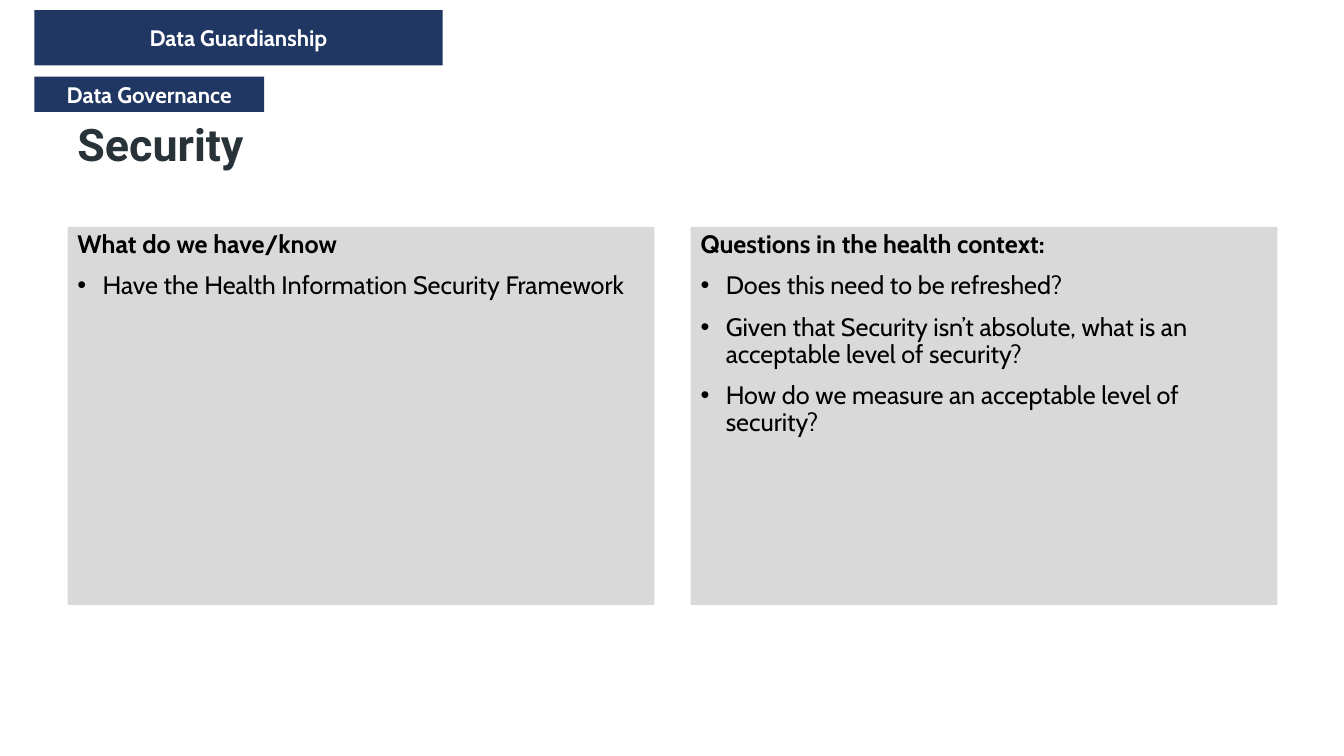
import dataclasses

import pptx
import pptx.dml.color
import pptx.enum.shapes
import pptx.enum.text
import pptx.oxml
import pptx.oxml.ns
import pptx.util

Inches = pptx.util.Inches
Pt = pptx.util.Pt
ANCHOR = pptx.enum.text.MSO_ANCHOR
ALIGN = pptx.enum.text.PP_ALIGN


@dataclasses.dataclass(frozen=True)
class Theme:
    """Colours, typefaces and type sizes of the slide."""
    navy: str = "213763"
    panel: str = "D9D9D9"
    heading: str = "283239"
    ink: str = "000000"
    white: str = "FFFFFF"
    title_face: str = "Roboto"
    body_face: str = "Cabin"
    title_size: int = 32
    body_size: int = 18
    label_size: int = 16


def apply(target, formats):
    """Set each attribute named in formats on the target."""
    for name, value in formats.items():
        setattr(target, name, value)


class SlideBuilder:
    """Draws titles, labels and panels on the current page."""

    def __init__(self, deck, theme):
        """Add a blank page to the deck."""
        self.theme = theme
        self.page = deck.slides.add_slide(deck.slide_layouts[6])

    def add_span(self, para, text, face, size, colour, bold=True, **layout):
        """Put one styled span of text in a paragraph."""
        apply(para, layout)
        span = para.add_run()
        span.text = text
        apply(span.font, {"name": face, "size": Pt(size), "bold": bold})
        span.font.color.rgb = pptx.dml.color.RGBColor.from_string(colour)

    def block(self, left, top, width, height, colour):
        """Add a plain filled rectangle."""
        box = self.page.shapes.add_shape(
            pptx.enum.shapes.MSO_SHAPE.RECTANGLE,
            Inches(left), Inches(top), Inches(width), Inches(height))
        box.shadow.inherit = False
        box.fill.solid()
        box.fill.fore_color.rgb = pptx.dml.color.RGBColor.from_string(colour)
        box.line.fill.background()
        return box.text_frame

    def title(self, text, left, top, width, height):
        """Add the slide heading."""
        theme = self.theme
        frame = self.page.shapes.add_textbox(
            Inches(left), Inches(top), Inches(width), Inches(height)).text_frame
        apply(frame, {"word_wrap": True, "vertical_anchor": ANCHOR.MIDDLE})
        self.add_span(frame.paragraphs[0], text, theme.title_face,
                      theme.title_size, theme.heading, line_spacing=0.9)

    def label(self, text, left, top, width, height):
        """Add a navy label with centred text."""
        theme = self.theme
        frame = self.block(left, top, width, height, theme.navy)
        apply(frame, {"word_wrap": False, "vertical_anchor": ANCHOR.MIDDLE})
        self.add_span(frame.paragraphs[0], text, theme.body_face,
                      theme.label_size, theme.white, alignment=ALIGN.CENTER)

    def panel(self, heading, points, left, top, width, height):
        """Add a grey panel with a heading and bullet points."""
        theme = self.theme
        frame = self.block(left, top, width, height, theme.panel)
        apply(frame, {"word_wrap": True, "vertical_anchor": ANCHOR.TOP})
        style = (theme.body_face, theme.body_size, theme.ink)
        layout = {"alignment": ALIGN.LEFT, "line_spacing": 0.9}
        self.add_span(frame.paragraphs[0], heading, *style, **layout)
        for point in points:
            para = frame.add_paragraph()
            self.bullet(para)
            self.add_span(para, point, *style, bold=False,
                          space_before=Pt(10), **layout)

    def bullet(self, para):
        """Give a paragraph a hanging bullet."""
        properties = para._p.get_or_add_pPr()
        properties.set("marL", str(Inches(0.25)))
        properties.set("indent", str(Inches(-0.25)))
        namespace = pptx.oxml.ns.nsdecls("a")
        for element in ('buFont {} typeface="Arial"', 'buChar {} char="•"'):
            properties.append(
                pptx.oxml.parse_xml(f"<a:{element.format(namespace)}/>"))


def main():
    """Build and save the slide."""
    deck = pptx.Presentation()
    apply(deck, {"slide_width": Inches(13.33), "slide_height": Inches(7.5)})
    builder = SlideBuilder(deck, Theme())
    builder.title("Security", 0.67, 0.83, 12, 1.25)
    builder.label("Data Governance", 0.34, 0.76, 2.28, 0.35)
    builder.label("Data Guardianship", 0.34, 0.1, 4.05, 0.55)
    panels = {
        "What do we have/know": [
            "Have the Health Information Security Framework",
        ],
        "Questions in the health context:": [
            "Does this need to be refreshed?",
            "Given that Security isn’t absolute, what is an acceptable level of security?",
            "How do we measure an acceptable level of security?",
        ],
    }
    for column, (heading, points) in enumerate(panels.items()):
        builder.panel(heading, points, 0.67 + column * 6.18, 2.25, 5.82, 3.75)
    deck.save("out.pptx")


if __name__ == "__main__":
    main()
